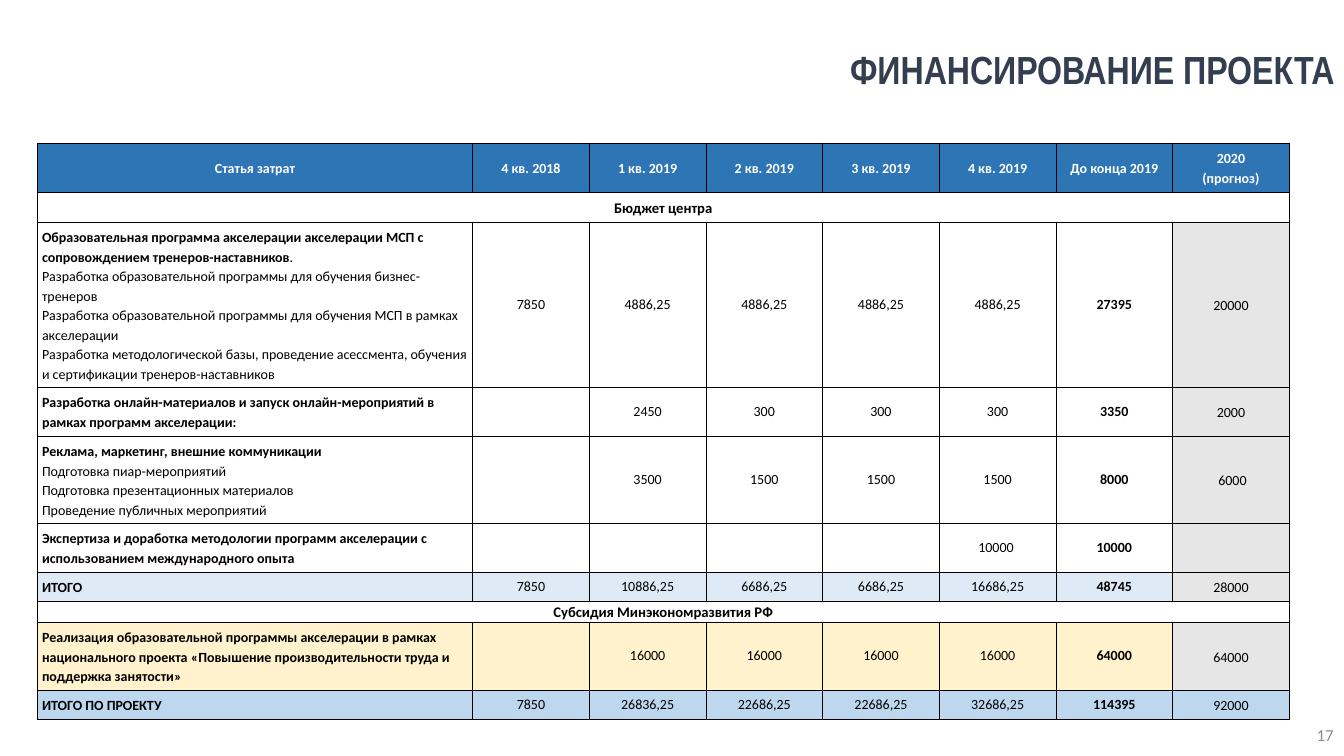
from lxml.etree import SubElement
from pptx import Presentation
from pptx.dml.color import RGBColor
from pptx.enum.text import MSO_ANCHOR as Anchor, PP_ALIGN as Align
from pptx.oxml.ns import qn
from pptx.util import Cm, Pt

COLORS = {
    "title": "333F50", "number": "8C8C8C", "header": "2E75B6", "white": "FFFFFF",
    "black": "000000", "forecast": "E7E6E6", "total": "DEEBF7",
    "subsidy": "FFF2CC", "grand": "BDD7EE",
}
PERIODS = ["4 кв. 2018", "1 кв. 2019", "2 кв. 2019", "3 кв. 2019", "4 кв. 2019",
           "До конца 2019", "2020\n(прогноз)"]
ITEM_WIDTH, PERIOD_WIDTH = 10.97, 2.94
BUDGET = [
    (1.23, "header", ["Статья затрат"], PERIODS),
    (0.76, None, ["Бюджет центра"], None),
    (4.16, None,
     ["Образовательная программа акселерации акселерации МСП с сопровождением тренеров-наставников|.",
      "Разработка образовательной программы для обучения бизнес-тренеров",
      "Разработка образовательной программы для обучения МСП в рамках акселерации",
      "Разработка методологической базы, проведение асессмента, обучения и сертификации тренеров-наставников"],
     ["7850"] + ["4886,25"] * 4 + ["27395", "20000"]),
    (1.23, None,
     ["Разработка онлайн-материалов и запуск онлайн-мероприятий в рамках программ акселерации:"],
     ["", "2450", "300", "300", "300", "3350", "2000"]),
    (2.19, None,
     ["Реклама, маркетинг, внешние коммуникации", "Подготовка пиар-мероприятий",
      "Подготовка презентационных материалов", "Проведение публичных мероприятий"],
     ["", "3500", "1500", "1500", "1500", "8000", " 6000"]),
    (1.23, None,
     ["Экспертиза и доработка методологии программ акселерации с использованием международного опыта"],
     ["", "", "", "", "10000 ", "10000", ""]),
    (0.74, "total", ["ИТОГО"],
     ["7850", "10886,25", "6686,25", "6686,25", "16686,25", "48745", "28000"]),
    (0.53, None, ["Субсидия Минэкономразвития РФ"], None),
    (1.71, "subsidy",
     ["Реализация образовательной программы акселерации в рамках национального проекта "
      "«Повышение производительности труда и поддержка занятости»"],
     [""] + ["16000"] * 4 + ["64000", "64000"]),
    (0.74, "grand", ["ИТОГО ПО ПРОЕКТУ"],
     ["7850", "26836,25", "22686,25", "22686,25", "32686,25", "114395", "92000"]),
]


def style(font, size, color, bold=False, name="Calibri"):
    """Set the look of a font."""
    font.name, font.size, font.bold = name, Pt(size), bold
    font.color.rgb = RGBColor.from_string(COLORS[color])


def add_line(slide, box, text, anchor, **look):
    """Place one right-aligned line of text in a box."""
    frame = slide.shapes.add_textbox(*map(Cm, box)).text_frame
    frame.word_wrap, frame.vertical_anchor = True, anchor
    line = frame.paragraphs[0]
    line.text, line.alignment, line.line_spacing = text, Align.RIGHT, 0.9
    style(line.font, **look)


def frame_cell(cell, fill, margin=0.12):
    """Give a cell its margins, thin black borders and fill."""
    cell.margin_left = cell.margin_right = Cm(0.12)
    cell.margin_top = cell.margin_bottom = Cm(margin)
    props = cell._tc.get_or_add_tcPr()
    for side in ("a:lnL", "a:lnR", "a:lnT", "a:lnB"):
        border = SubElement(props, qn(side), w=str(Pt(0.5)))
        solid = SubElement(border, qn("a:solidFill"))
        SubElement(solid, qn("a:srgbClr"), val=COLORS["black"])
    if fill:
        cell.fill.solid()
        cell.fill.fore_color.rgb = RGBColor.from_string(COLORS[fill])
    else:
        cell.fill.background()


def write_cell(cell, lines, align, bolds, size=10, color="black", spacing=1.15):
    """Write lines into a cell; a bar in a line starts its plain-weight tail."""
    frame = cell.text_frame
    for index, (line, bold) in enumerate(zip(lines, bolds)):
        paragraph = frame.add_paragraph() if index else frame.paragraphs[0]
        paragraph.alignment, paragraph.line_spacing = align, spacing
        style(paragraph.font, size, color, bold)
        head, _, tail = line.partition("|")
        paragraph.add_run().text = head
        if tail:
            ending = paragraph.add_run()
            ending.text, ending.font.bold = tail, False


def add_budget(slide, left, top):
    """Build the budget table with its top left corner at the given point."""
    width = ITEM_WIDTH + PERIOD_WIDTH * len(PERIODS)
    height = sum(row[0] for row in BUDGET)
    budget = slide.shapes.add_table(len(BUDGET), len(PERIODS) + 1, Cm(left), Cm(top),
                                    Cm(width), Cm(height)).table
    budget.first_row = budget.horz_banding = False
    for index, column in enumerate(budget.columns):
        column.width = Cm(PERIOD_WIDTH if index else ITEM_WIDTH)
    for r, (row_height, fill, item, amounts) in enumerate(BUDGET):
        budget.rows[r].height = Cm(row_height)
        cells = list(budget.rows[r].cells)
        if amounts is None:
            for cell in cells:
                frame_cell(cell, fill, 0 if row_height < 0.6 else 0.12)
            cells[0].merge(cells[-1])
            write_cell(cells[0], item, Align.CENTER, [True], size=10.5)
            continue
        header = fill == "header"
        color = "white" if header else "black"
        frame_cell(cells[0], fill)
        write_cell(cells[0], item, Align.CENTER if header else Align.LEFT,
                   [True] + [False] * (len(item) - 1), color=color)
        if header:
            cells[0].vertical_anchor = Anchor.MIDDLE
        for c, amount in enumerate(amounts, 1):
            forecast = c == len(PERIODS)
            plain = header or fill == "grand" or not forecast
            frame_cell(cells[c], fill if plain else "forecast")
            cells[c].vertical_anchor = Anchor.MIDDLE
            if amount:
                bold = header or c == len(PERIODS) - 1
                write_cell(cells[c], amount.split("\n"), Align.CENTER, [bold] * 2,
                           color=color, spacing=1.15 if header or forecast else 1)


def main():
    """Build and save the project funding slide."""
    deck = Presentation()
    deck.slide_width, deck.slide_height = Cm(33.87), Cm(19.05)
    slide = deck.slides.add_slide(deck.slide_layouts[6])
    add_line(slide, (8.94, 1.14, 24.94, 2.41), "ФИНАНСИРОВАНИЕ ПРОЕКТА", Anchor.TOP,
             size=28, color="title", bold=True, name="Arial Narrow")
    add_line(slide, (26.24, 18.03, 7.62, 1.02), "17", Anchor.MIDDLE, size=12, color="number")
    add_budget(slide, 0.94, 3.61)
    deck.save("out.pptx")


if __name__ == "__main__":
    main()
